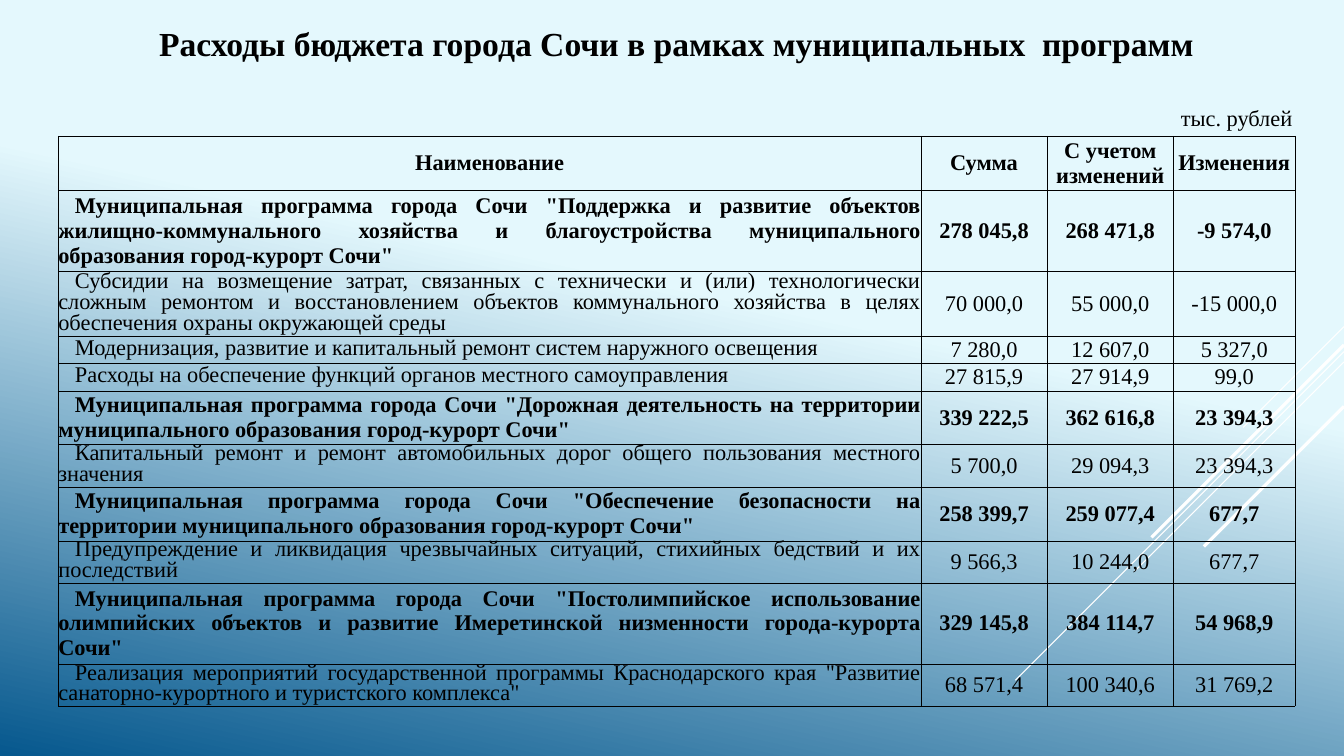
from lxml import etree
from pptx import Presentation
from pptx import util as u
from pptx.dml.color import RGBColor
from pptx.enum import shapes, text
from pptx.oxml.ns import qn

Cm = u.Cm
BLACK, WHITE = "000000", "FFFFFF"
CENTER, JUSTIFY = text.PP_ALIGN.CENTER, text.PP_ALIGN.JUSTIFY

HEADER = ("Наименование", "Сумма", "С учетом изменений", "Изменения")
COLUMN_WIDTHS = (21.74, 3.18, 3.18, 3.07)
HEADER_HEIGHT = 1.36

# Row height, is a whole programme, name, amount, amended amount, change
ROWS = (
    (2.04, True, 'Муниципальная программа города Сочи "Поддержка и развитие объектов '
     'жилищно-коммунального хозяйства и благоустройства муниципального образования город-курорт Сочи"',
     "278 045,8", "268 471,8", "-9 574,0"),
    (1.64, False, "Субсидии на возмещение затрат, связанных с технически и (или) технологически "
     "сложным ремонтом и восстановлением объектов коммунального хозяйства в целях "
     "обеспечения охраны окружающей среды",
     "70 000,0", "55 000,0", "-15 000,0"),
    (0.69, False, "Модернизация, развитие и капитальный ремонт систем наружного освещения",
     "7 280,0", "12 607,0", "5 327,0"),
    (0.69, False, "Расходы на обеспечение функций органов местного самоуправления",
     "27 815,9", "27 914,9", "99,0"),
    (1.36, True, 'Муниципальная программа города Сочи "Дорожная деятельность на территории '
     'муниципального образования город-курорт Сочи"',
     "339 222,5", "362 616,8", "23 394,3"),
    (1.06, False, "Капитальный ремонт и ремонт автомобильных дорог общего пользования местного значения",
     "5 700,0", "29 094,3", "23 394,3"),
    (1.36, True, 'Муниципальная программа города Сочи "Обеспечение безопасности на территории '
     'муниципального образования город-курорт Сочи"',
     "258 399,7", "259 077,4", "677,7"),
    (1.06, False, "Предупреждение и ликвидация чрезвычайных ситуаций, стихийных бедствий и их последствий",
     "9 566,3", "10 244,0", "677,7"),
    (2.04, True, 'Муниципальная программа города Сочи "Постолимпийское использование олимпийских '
     'объектов и развитие Имеретинской низменности города-курорта Сочи"',
     "329 145,8", "384 114,7", "54 968,9"),
    (1.06, False, "Реализация мероприятий государственной программы Краснодарского края "
     '"Развитие санаторно-курортного и туристского комплекса"',
     "68 571,4", "100 340,6", "31 769,2"),
)

# Diagonal rays from the right edge: start height, horizontal run, line width
RAYS = ((8.23, 2.54, 0.75), (8.86, 8.28, 0.75), (9.12, 5.27, 0.75),
        (8.69, 4.85, 2.25), (10.24, 3.53, 2.25))


def color(value):
    return RGBColor.from_string(value)


def write(frame, content, size=16, bold=False, align=None, line_spacing=None, indent=None):
    paragraph = frame.paragraphs[0]
    if align is not None:
        paragraph.alignment = align
    if line_spacing:
        paragraph.line_spacing = u.Pt(line_spacing)
    if indent:
        properties = paragraph._p.get_or_add_pPr()
        properties.set("marL", "0")
        properties.set("indent", str(Cm(indent)))
    run = paragraph.add_run()
    run.text = content
    run.font.name = "Times New Roman"
    run.font.size = u.Pt(size)
    run.font.bold = bold
    run.font.color.rgb = color(BLACK)


def add_background(slide):
    fill = slide.background.fill
    fill.gradient()
    fill.gradient_angle = 258
    for stop, position, value in zip(fill.gradient_stops, (0.41, 1), ("E4F8FD", "06588E")):
        stop.position = position
        stop.color.rgb = color(value)


def add_ray(slide, right, top, run, width):
    ray = slide.shapes.add_connector(shapes.MSO_CONNECTOR.STRAIGHT,
                                     right, Cm(top), right - Cm(run), Cm(top + run))
    ray.line.color.rgb = color(WHITE)
    ray.line.width = u.Pt(width)
    etree.SubElement(ray._element.spPr, qn("a:effectLst"))


def add_label(slide, left, top, width, height, content, **style):
    box = slide.shapes.add_textbox(Cm(left), Cm(top), Cm(width), Cm(height))
    box.text_frame.word_wrap = True
    write(box.text_frame, content, **style)


def add_borders(cell):
    properties = cell._tc.get_or_add_tcPr()
    for side in ("a:lnL", "a:lnR", "a:lnT", "a:lnB"):
        line = etree.SubElement(properties, qn(side), w=str(u.Pt(0.5)))
        fill = etree.SubElement(line, qn("a:solidFill"))
        etree.SubElement(fill, qn("a:srgbClr"), val=BLACK)


def fill_cell(cell, content, **style):
    cell.margin_left = cell.margin_right = cell.margin_top = cell.margin_bottom = 0
    cell.vertical_anchor = text.MSO_ANCHOR.MIDDLE
    add_borders(cell)
    cell.fill.background()
    write(cell.text_frame, content, **style)


def add_budget_table(slide):
    heights = [HEADER_HEIGHT] + [row[0] for row in ROWS]
    table = slide.shapes.add_table(len(heights), len(HEADER), Cm(1.47), Cm(3.43),
                                   Cm(sum(COLUMN_WIDTHS)), Cm(sum(heights))).table
    table.first_row = table.horz_banding = False
    for column, width in zip(table.columns, COLUMN_WIDTHS):
        column.width = Cm(width)
    for row, height in zip(table.rows, heights):
        row.height = Cm(height)

    for column, title in enumerate(HEADER):
        fill_cell(table.cell(0, column), title, bold=True, align=CENTER)
    for index, (_, is_program, name, *amounts) in enumerate(ROWS, 1):
        fill_cell(table.cell(index, 0), name, bold=is_program, align=JUSTIFY, indent=0.42,
                  line_spacing=None if is_program else 15)
        for column, amount in enumerate(amounts, 1):
            fill_cell(table.cell(index, column), amount, bold=is_program, align=CENTER)


def main():
    presentation = Presentation()
    presentation.slide_width, presentation.slide_height = Cm(33.87), Cm(19.05)
    slide = presentation.slides.add_slide(presentation.slide_layouts[6])

    # Backdrop
    add_background(slide)
    for ray in RAYS:
        add_ray(slide, presentation.slide_width, *ray)

    # Title, table and unit of measure
    add_label(slide, 2.01, 0.46, 30.07, 1.27,
              "Расходы бюджета города Сочи в рамках муниципальных  программ",
              size=24, bold=True, align=CENTER)
    add_budget_table(slide)
    add_label(slide, 29.51, 2.49, 3.84, 0.94, "тыс. рублей")

    presentation.save("out.pptx")


if __name__ == "__main__":
    main()
